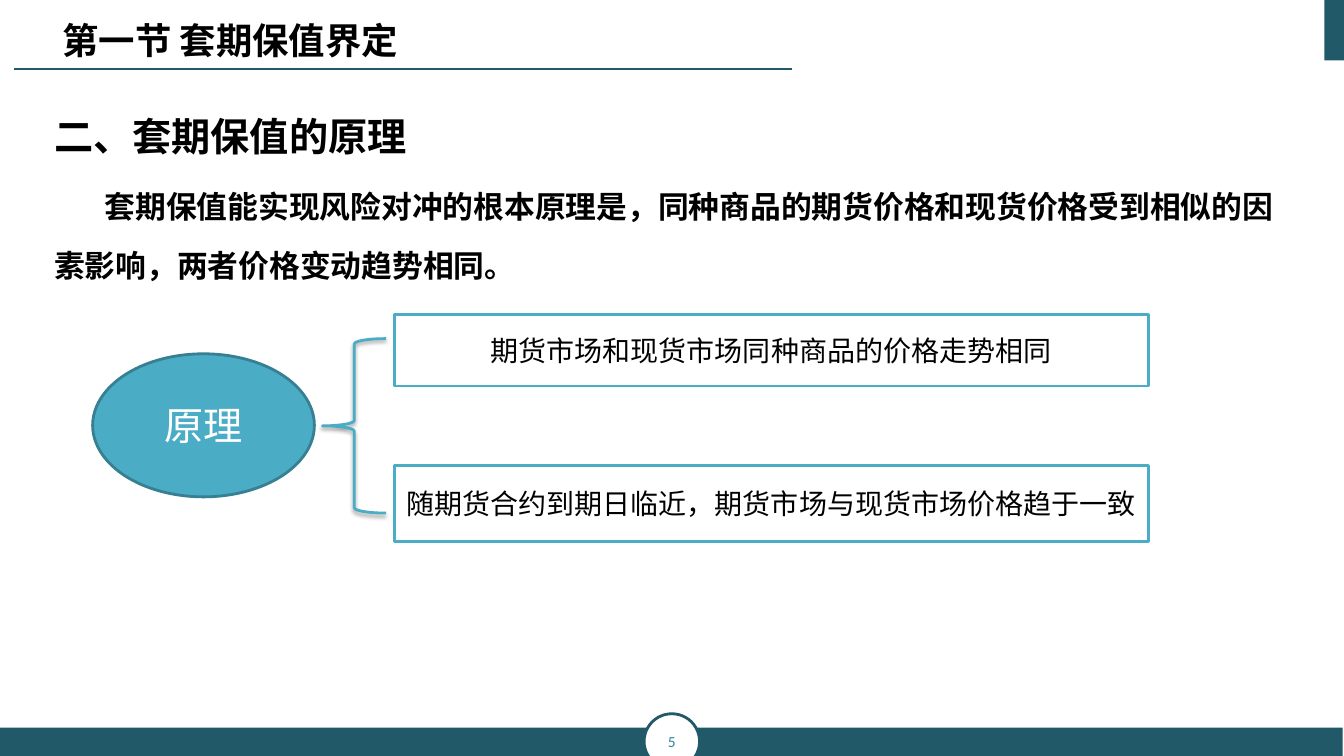
from dataclasses import dataclass
from typing import Optional

from lxml.etree import SubElement
from pptx import Presentation
from pptx.dml.color import RGBColor
from pptx.enum.shapes import MSO_CONNECTOR, MSO_SHAPE
from pptx.enum.text import MSO_ANCHOR, PP_ALIGN
from pptx.oxml.ns import qn
from pptx.util import Pt

DARK_TEAL = "215968"
SKY = "4BACC6"
WHITE = "FFFFFF"
BLACK = "000000"
CHINESE_FONT = "Noto Sans CJK SC"


@dataclass(frozen=True)
class TextStyle:
    size: float
    color: str = BLACK
    font: str = "Calibri"
    bold: bool = False


@dataclass(frozen=True)
class Figure:
    kind: MSO_SHAPE
    left: float
    top: float
    width: float
    height: float
    fill: Optional[str] = None
    line: Optional[str] = None
    text: str = ""
    style: Optional[TextStyle] = None


@dataclass(frozen=True)
class Paragraph:
    text: str
    style: TextStyle
    indent: float = 0
    line_spacing: float = 1
    space_before: float = 0


@dataclass(frozen=True)
class TextBlock:
    left: float
    top: float
    width: float
    height: float
    paragraphs: tuple[Paragraph, ...]


LABEL = TextStyle(20)
HEADING = TextStyle(28, font="Times New Roman", bold=True)
BODY = TextStyle(22, font="Times New Roman", bold=True)
TITLE = TextStyle(26, font=CHINESE_FONT, bold=True)

FRAME = (
    Figure(MSO_SHAPE.RECTANGLE, 946, 0, 14, 43.2, DARK_TEAL),
    Figure(MSO_SHAPE.RECTANGLE, 0, 519.8, 959, 20.2, DARK_TEAL),
    Figure(MSO_SHAPE.OVAL, 460.1, 509.8, 39.6, 39.6, WHITE, DARK_TEAL,
           "5", TextStyle(11, "31859C")),
)

TEXT_BLOCKS = (
    TextBlock(31.7, 77, 901.4, 415.4, (
        Paragraph("二、套期保值的原理", HEADING),
        Paragraph("套期保值能实现风险对冲的根本原理是，同种商品的期货价格和现货价格受到相似的因素影响，"
                  "两者价格变动趋势相同。", BODY, 36, 1.6, 4.4),
    )),
    TextBlock(37.4, 9.4, 317.5, 38.9, (Paragraph("第一节 套期保值界定", TITLE),)),
)

DIAGRAM = (
    Figure(MSO_SHAPE.OVAL, 66.2, 252.7, 158.4, 102.2, SKY, "377F92",
           "原理", TextStyle(28, WHITE)),
    Figure(MSO_SHAPE.RECTANGLE, 281.5, 224.6, 538.6, 51.1, WHITE, SKY,
           "期货市场和现货市场同种商品的价格走势相同", LABEL),
    Figure(MSO_SHAPE.RECTANGLE, 281.5, 332.6, 538.6, 54, WHITE, SKY,
           "随期货合约到期日临近，期货市场与现货市场价格趋于一致", LABEL),
)

BRACE = Figure(MSO_SHAPE.LEFT_BRACE, 230.4, 241.9, 45.4, 124.6, line=SKY)


def rgb(value: str) -> RGBColor:
    return RGBColor.from_string(value)


def format_runs(para, style: TextStyle) -> None:
    for span in para.runs:
        span.font.size = Pt(style.size)
        span.font.bold = style.bold
        span.font.color.rgb = rgb(style.color)
        span.font.name = style.font
        SubElement(span.font._element, qn("a:ea"), typeface=CHINESE_FONT)


def draw_figure(page, figure: Figure):
    shape = page.shapes.add_shape(figure.kind, Pt(figure.left), Pt(figure.top),
                                  Pt(figure.width), Pt(figure.height))
    shape.shadow.inherit = False
    if figure.fill:
        shape.fill.solid()
        shape.fill.fore_color.rgb = rgb(figure.fill)
    else:
        shape.fill.background()
    if figure.line:
        shape.line.color.rgb = rgb(figure.line)
        shape.line.width = Pt(2)
    else:
        shape.line.fill.background()
    if figure.style:
        shape.text_frame.text = figure.text
        shape.text_frame.vertical_anchor = MSO_ANCHOR.MIDDLE
        para = shape.text_frame.paragraphs[0]
        para.alignment = PP_ALIGN.CENTER
        format_runs(para, figure.style)
    return shape


def draw_text(page, block: TextBlock) -> None:
    box = page.shapes.add_textbox(Pt(block.left), Pt(block.top), Pt(block.width), Pt(block.height))
    frame = box.text_frame
    frame.word_wrap = True
    for index, item in enumerate(block.paragraphs):
        para = frame.add_paragraph() if index else frame.paragraphs[0]
        para.text = item.text
        para.line_spacing = item.line_spacing
        if item.space_before:
            para.space_before = Pt(item.space_before)
        if item.indent:
            para._p.get_or_add_pPr().set("indent", str(Pt(item.indent)))
        format_runs(para, item.style)


def add_shadow(shape) -> None:
    effects = shape._element.spPr.find(qn("a:effectLst"))
    shadow = SubElement(effects, qn("a:outerShdw"), blurRad=str(Pt(3.1)), dist=str(Pt(1.6)),
                        dir="5400000", rotWithShape="0")
    color = SubElement(shadow, qn("a:srgbClr"), val=BLACK)
    SubElement(color, qn("a:alpha"), val="38000")


def draw_title_rule(page) -> None:
    rule = page.shapes.add_connector(MSO_CONNECTOR.STRAIGHT, Pt(565.9), Pt(49), Pt(10.1), Pt(49))
    rule.line.color.rgb = rgb(DARK_TEAL)
    rule.line.width = Pt(1.5)
    SubElement(rule._element.spPr, qn("a:effectLst"))


def main() -> None:
    deck = Presentation()
    deck.slide_width, deck.slide_height = Pt(960), Pt(540)
    page = deck.slides.add_slide(deck.slide_layouts[6])
    for figure in FRAME:
        draw_figure(page, figure)
    draw_title_rule(page)
    for block in TEXT_BLOCKS:
        draw_text(page, block)
    add_shadow(draw_figure(page, BRACE))
    for figure in DIAGRAM:
        draw_figure(page, figure)
    deck.save("out.pptx")


if __name__ == "__main__":
    main()
